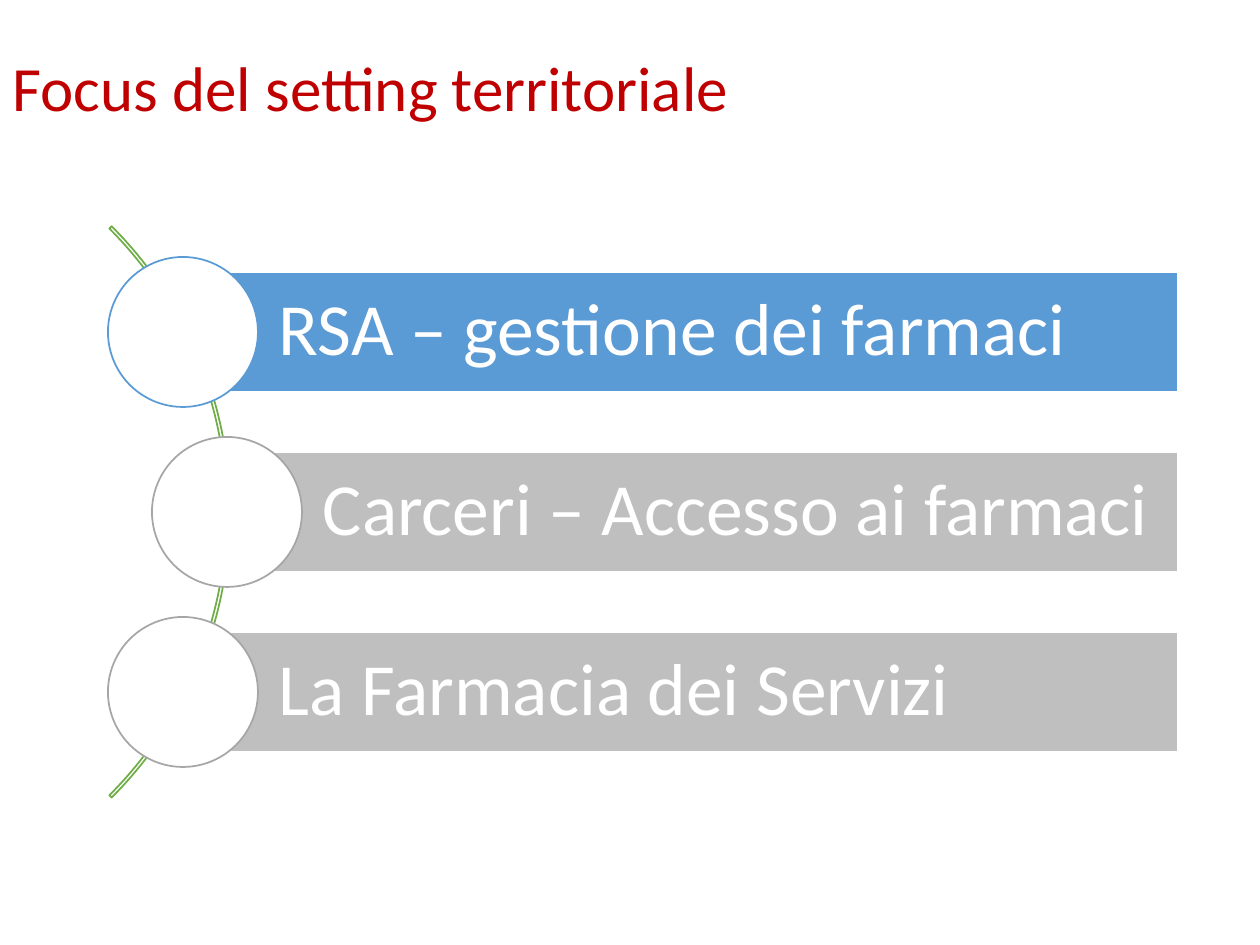
from dataclasses import dataclass

from pptx import Presentation
from pptx.dml.color import RGBColor
from pptx.enum.shapes import MSO_SHAPE
from pptx.enum.text import MSO_ANCHOR, MSO_AUTO_SIZE, PP_ALIGN
from pptx.util import Pt

EMU_PER_PX = 914400 / 126
TITLE_ONLY_LAYOUT = 5
RECTANGLE = MSO_SHAPE.RECTANGLE
OVAL = MSO_SHAPE.OVAL
BLOCK_ARC = MSO_SHAPE.BLOCK_ARC
MIDDLE = MSO_ANCHOR.MIDDLE
NO_AUTO_SIZE = MSO_AUTO_SIZE.NONE
LEFT = PP_ALIGN.LEFT

BAR_RIGHT = 1178
BAR_HEIGHT = 120
CIRCLE_SIZE = 150
FIRST_ROW_CENTER = 332
ROW_PITCH = 180
ARC_BOX = (-578, 108, 808, 808)
ARC_ADJUSTMENTS = (189, 27, 0.004)


@dataclass(frozen=True)
class Theme:
    font: str = "Calibri"
    title_size: int = 36
    topic_size: int = 42
    line_width: int = 1
    title: str = "C00000"
    white: str = "FFFFFF"
    arc: str = "70AD47"
    active: str = "5B9BD5"
    muted: str = "BFBFBF"
    muted_outline: str = "A6A6A6"


THEME = Theme()

TOPICS = [
    ("RSA – gestione dei farmaci", 183, THEME.active, THEME.active),
    ("Carceri – Accesso ai farmaci", 227, THEME.muted, THEME.muted_outline),
    ("La Farmacia dei Servizi", 183, THEME.muted, THEME.muted_outline),
]


def px(value):
    return round(value * EMU_PER_PX)


def color(value):
    return RGBColor.from_string(value)


def set_text(text_frame, text, size, text_color):
    text_frame.text = text
    text_frame.word_wrap = True
    text_frame.auto_size = NO_AUTO_SIZE
    text_frame.vertical_anchor = MIDDLE
    paragraph = text_frame.paragraphs[0]
    paragraph.alignment = LEFT
    paragraph.line_spacing = 0.9
    font = paragraph.runs[0].font
    font.name = THEME.font
    font.size = Pt(size)
    font.color.rgb = color(text_color)


def add_title(slide, text):
    title = slide.shapes.title
    title.left, title.top, title.width, title.height = map(px, (0, 0, 1086, 183))
    set_text(title.text_frame, text, THEME.title_size, THEME.title)


def add_outlined_shape(slide, kind, box, outline, fill=None):
    shape = slide.shapes.add_shape(kind, *map(px, box))
    shape.shadow.inherit = False
    if fill:
        shape.fill.solid()
        shape.fill.fore_color.rgb = color(fill)
    else:
        shape.fill.background()
    shape.line.color.rgb = color(outline)
    shape.line.width = Pt(THEME.line_width)
    return shape


def add_arc(slide):
    arc = add_outlined_shape(slide, BLOCK_ARC, ARC_BOX, THEME.arc)
    for index, value in enumerate(ARC_ADJUSTMENTS):
        arc.adjustments[index] = value


def add_topic(slide, center_y, text, left, fill, outline):
    bar_box = (left, center_y - BAR_HEIGHT // 2, BAR_RIGHT - left, BAR_HEIGHT)
    bar = add_outlined_shape(slide, RECTANGLE, bar_box, THEME.white, fill)
    text_frame = bar.text_frame
    text_frame.margin_left = px(96)
    text_frame.margin_right = px(15)
    text_frame.margin_top = px(15)
    text_frame.margin_bottom = px(15)
    set_text(text_frame, text, THEME.topic_size, THEME.white)

    radius = CIRCLE_SIZE // 2
    circle_box = (left - radius, center_y - radius, CIRCLE_SIZE, CIRCLE_SIZE)
    add_outlined_shape(slide, OVAL, circle_box, outline, THEME.white)


def main():
    presentation = Presentation()
    presentation.slide_width = px(1260)
    presentation.slide_height = px(945)
    slide = presentation.slides.add_slide(presentation.slide_layouts[TITLE_ONLY_LAYOUT])
    add_title(slide, "Focus del setting territoriale")
    add_arc(slide)
    for row, topic in enumerate(TOPICS):
        add_topic(slide, FIRST_ROW_CENTER + row * ROW_PITCH, *topic)
    presentation.save("out.pptx")


if __name__ == "__main__":
    main()
